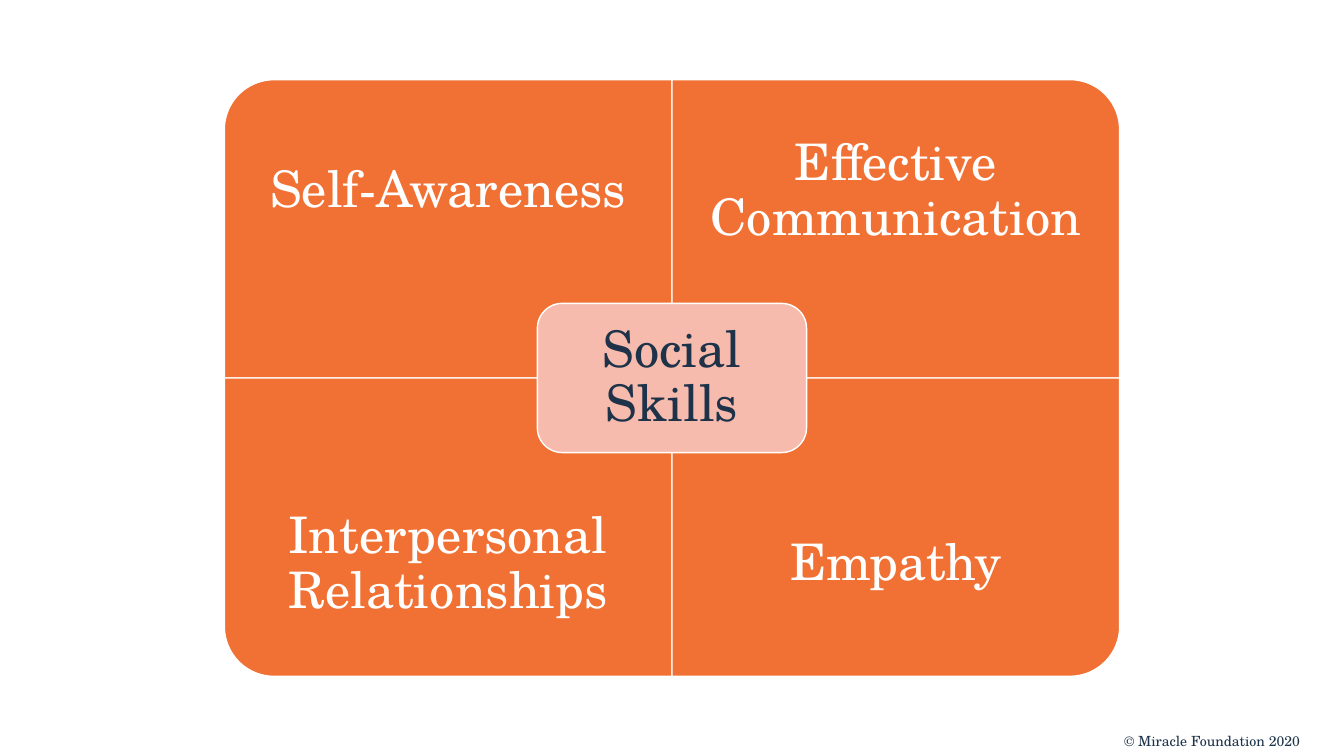
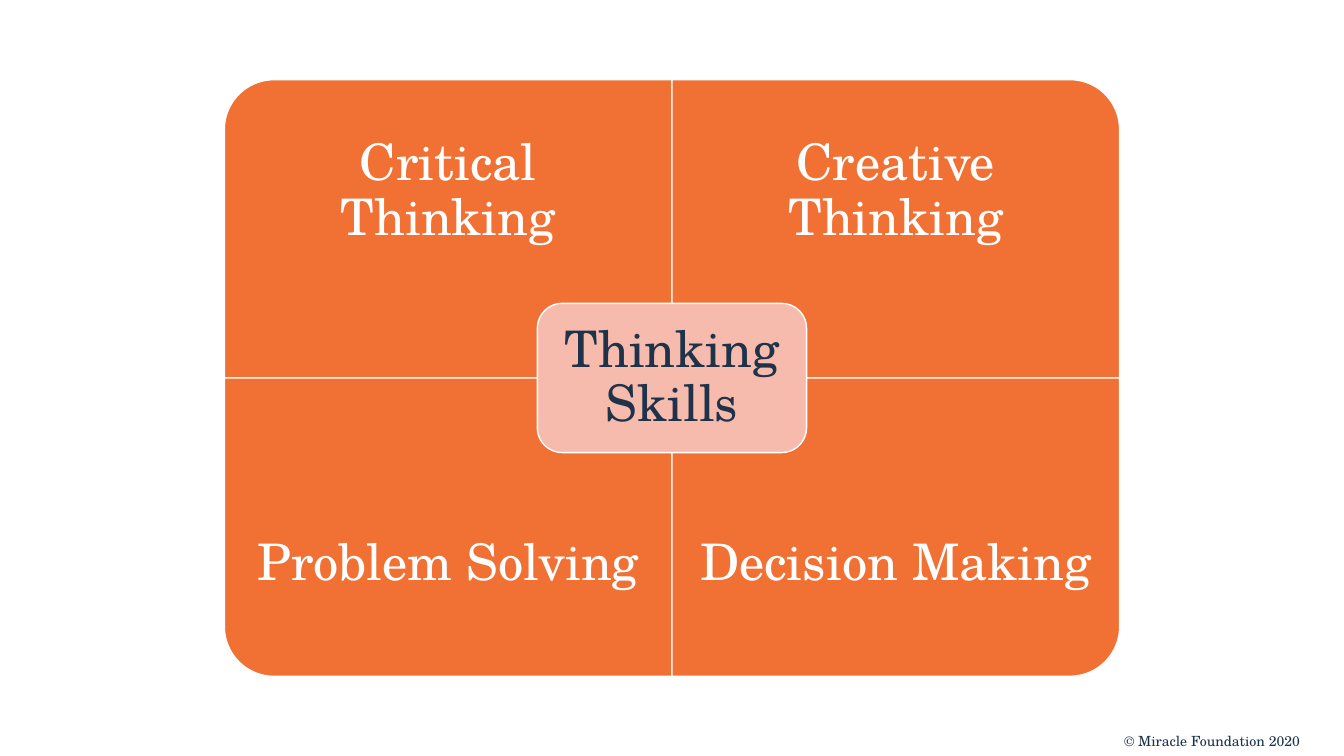
"""Build two four-part skill diagrams, each around a central hub."""
from pptx import Presentation
from pptx.dml.color import RGBColor
from pptx.enum.shapes import MSO_SHAPE as Shape
from pptx.enum.text import MSO_ANCHOR as Anchor, PP_ALIGN as Align
from pptx.util import Inches, Pt

SLIDES = [
    ("Social Skills", ["Self-Awareness", "Effective Communication",
                       "Interpersonal Relationships", "Empathy"]),
    ("Thinking Skills", ["Critical Thinking", "Creative Thinking",
                         "Problem Solving", "Decision Making"]),
]
FOOTER = "© Miracle Foundation 2020"
FONT = "TeX Gyre Schola"
COLORS = {"tile": "F17134", "hub": "F7BBAE", "white": "FFFFFF",
          "navy": "1E3349", "footer": "1D334A"}
WIDE, HIGH = 13.33, 7.5
MID_X, MID_Y = WIDE / 2, HIGH / 2
TILE_W, TILE_H = 4.44, 2.96
HUB_W, HUB_H = 2.67, 1.48
LABEL_H = TILE_H - HUB_H / 2
TURNS = [270, 0, 180, 90]


def color(name):
    return RGBColor.from_string(COLORS[name])


def box(x, y, w, h):
    return [Inches(v) for v in (x - w / 2, y - h / 2, w, h)]


def write(shape, text, size, ink):
    frame = shape.text_frame
    frame.word_wrap = True
    frame.text = text
    font = frame.paragraphs[0].runs[0].font
    font.name, font.size = FONT, Pt(size)
    font.color.rgb = color(ink)
    return frame


def write_mid(shape, text, ink, inset):
    frame = write(shape, text, 36, ink)
    frame.vertical_anchor = Anchor.MIDDLE
    frame.margin_left = frame.margin_right = Inches(inset)
    frame.margin_top = frame.margin_bottom = Inches(inset)
    para = frame.paragraphs[0]
    para.alignment = Align.CENTER
    para.line_spacing = 0.9


def add_panel(slide, kind, place, fill):
    panel = slide.shapes.add_shape(kind, *place)
    panel.shadow.inherit = False
    panel.fill.solid()
    panel.fill.fore_color.rgb = color(fill)
    panel.line.color.rgb = color("white")
    panel.line.width = Pt(1)
    return panel


def add_tile(slide, index, text):
    row, col = divmod(index, 2)
    down, side = 2 * row - 1, 2 * col - 1
    x, y = MID_X + side * TILE_W / 2, MID_Y + down * TILE_H / 2
    turn = TURNS[index]
    size = (TILE_H, TILE_W) if turn % 180 else (TILE_W, TILE_H)
    tile = add_panel(slide, Shape.ROUND_1_RECTANGLE, box(x, y, *size), "tile")
    tile.rotation = turn
    mid = MID_Y + down * (TILE_H - LABEL_H / 2)
    label = slide.shapes.add_textbox(*box(x, mid, TILE_W, LABEL_H))
    write_mid(label, text, "white", 0.25)


def add_slide(deck, hub_text, labels):
    slide = deck.slides.add_slide(deck.slide_layouts[6])
    for index, text in enumerate(labels):
        add_tile(slide, index, text)
    hub = add_panel(slide, Shape.ROUNDED_RECTANGLE,
                    box(MID_X, MID_Y, HUB_W, HUB_H), "hub")
    write_mid(hub, hub_text, "navy", 0.15)
    note = slide.shapes.add_textbox(Inches(11.05), Inches(7.22),
                                    Inches(2.06), Inches(0.28))
    write(note, FOOTER, 10, "footer")


def main():
    deck = Presentation()
    deck.slide_width, deck.slide_height = Inches(WIDE), Inches(HIGH)
    for hub_text, labels in SLIDES:
        add_slide(deck, hub_text, labels)
    deck.save("out.pptx")


if __name__ == "__main__":
    main()
